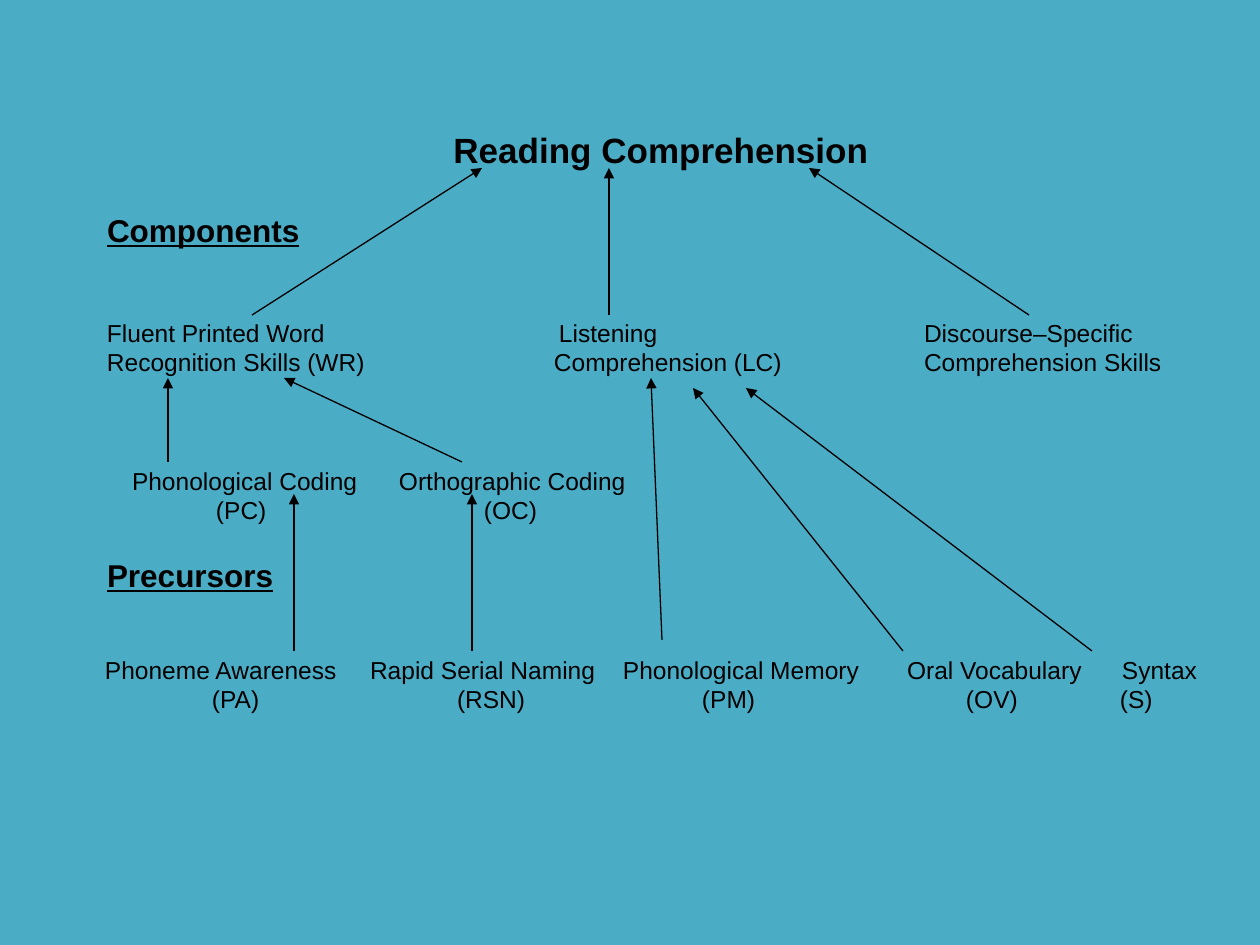
"""Build a slide mapping the components and precursors of reading comprehension."""
from dataclasses import dataclass

from lxml import etree
from pptx import Presentation
from pptx import util as u
from pptx.dml.color import RGBColor
from pptx.enum import shapes, text
from pptx.oxml import ns

PX = 914400 / 126


@dataclass(frozen=True)
class Theme:
    background: RGBColor = RGBColor(0x4B, 0xAC, 0xC6)
    ink: RGBColor = RGBColor(0, 0, 0)
    font: str = "Arial"
    title: int = 20
    heading: int = 18
    label: int = 14
    label_pitch: float = 16.8
    line: float = 0.75


@dataclass(frozen=True)
class Skill:
    left: int
    width: int
    lines: tuple[str, ...]
    indents: tuple[int, ...] = (0, 0)


@dataclass(frozen=True)
class Arrow:
    start: tuple[int, int]
    end: tuple[int, int]


THEME = Theme()
HEADINGS = {"Components": 211, "Precursors": 556}
SKILL_ROWS = {
    318: (
        Skill(107, 280, ("Fluent Printed Word", "Recognition Skills (WR)")),
        Skill(554, 250, ("Listening", "Comprehension (LC)"), (5, 0)),
        Skill(924, 260, ("Discourse–Specific", "Comprehension Skills")),
    ),
    466: (
        Skill(132, 245, ("Phonological Coding", "(PC)"), (0, 84)),
        Skill(399, 245, ("Orthographic Coding", "(OC)"), (0, 85)),
    ),
    655: (
        Skill(105, 250, ("Phoneme Awareness", "(PA)"), (0, 107)),
        Skill(370, 245, ("Rapid Serial Naming", "(RSN)"), (0, 87)),
        Skill(623, 255, ("Phonological Memory", "(PM)"), (0, 79)),
        Skill(907, 195, ("Oral Vocabulary", "(OV)"), (0, 59)),
        Skill(1120, 100, ("Syntax", "(S)"), (2, 0)),
    ),
}
ARROWS = (
    Arrow((252, 315), (482, 168)),
    Arrow((609, 315), (609, 168)),
    Arrow((1029, 315), (809, 168)),
    Arrow((168, 462), (168, 378)),
    Arrow((462, 462), (284, 378)),
    Arrow((294, 651), (294, 494)),
    Arrow((472, 651), (472, 494)),
    Arrow((662, 640), (651, 378)),
    Arrow((903, 651), (693, 388)),
    Arrow((1092, 651), (746, 388)),
)


def px(length: int) -> u.Emu:
    """Turn pixels into EMU."""
    return u.Emu(round(length * PX))


def write(box, lines: tuple[str, ...], *, size: int, bold: bool = False,
          underline: bool = False, align=text.PP_ALIGN.LEFT,
          indents: tuple[int, ...] = (0, 0), pitch: float | None = None) -> None:
    """Fill a text shape with one formatted paragraph per line."""
    frame = box.text_frame
    frame.word_wrap = True
    frame.auto_size = text.MSO_AUTO_SIZE.NONE
    frame.vertical_anchor = text.MSO_ANCHOR.TOP
    frame.margin_left = frame.margin_right = frame.margin_top = frame.margin_bottom = 0
    frame.text = "\n".join(lines)
    for paragraph, indent in zip(frame.paragraphs, indents):
        paragraph.alignment = align
        paragraph.line_spacing = u.Pt(pitch) if pitch else 1.0
        paragraph._p.get_or_add_pPr().set("marL", str(px(indent)))
        font = paragraph.runs[0].font
        font.name, font.size = THEME.font, u.Pt(size)
        font.bold, font.underline = bold, underline
        font.color.rgb = THEME.ink


def add_title(slide, title: str) -> None:
    """Place the diagram's top concept in the title placeholder."""
    box = slide.shapes.title
    box.left, box.top, box.width, box.height = px(441), px(128), px(440), px(40)
    write(box, (title,), size=THEME.title, bold=True, align=text.PP_ALIGN.CENTER)


def add_heading(slide, heading: str, top: int) -> None:
    """Add an underlined level heading."""
    box = slide.shapes.add_textbox(px(107), px(top), px(220), px(37))
    write(box, (heading,), size=THEME.heading, bold=True, underline=True)


def add_skill(slide, skill: Skill, top: int) -> None:
    """Add a two-line skill label."""
    box = slide.shapes.add_textbox(px(skill.left), px(top), px(skill.width), px(60))
    write(box, skill.lines, size=THEME.label, indents=skill.indents,
          pitch=THEME.label_pitch)


def add_arrow(slide, arrow: Arrow) -> None:
    """Draw an arrow from a skill to the one it supports."""
    connector = slide.shapes.add_connector(
        shapes.MSO_CONNECTOR.STRAIGHT, *map(px, arrow.start + arrow.end))
    connector.line.color.rgb = THEME.ink
    connector.line.width = u.Pt(THEME.line)
    etree.SubElement(connector.line._get_or_add_ln(), ns.qn("a:tailEnd"), type="triangle")
    etree.SubElement(connector._element.spPr, ns.qn("a:effectLst"))


def main() -> None:
    """Assemble and save the slide."""
    deck = Presentation()
    deck.slide_width, deck.slide_height = px(1260), px(945)
    slide = deck.slides.add_slide(deck.slide_layouts[5])
    slide.background.fill.solid()
    slide.background.fill.fore_color.rgb = THEME.background
    add_title(slide, "Reading Comprehension")
    for heading, top in HEADINGS.items():
        add_heading(slide, heading, top)
    for top, skills in SKILL_ROWS.items():
        for skill in skills:
            add_skill(slide, skill, top)
    for arrow in ARROWS:
        add_arrow(slide, arrow)
    deck.save("out.pptx")


if __name__ == "__main__":
    main()
